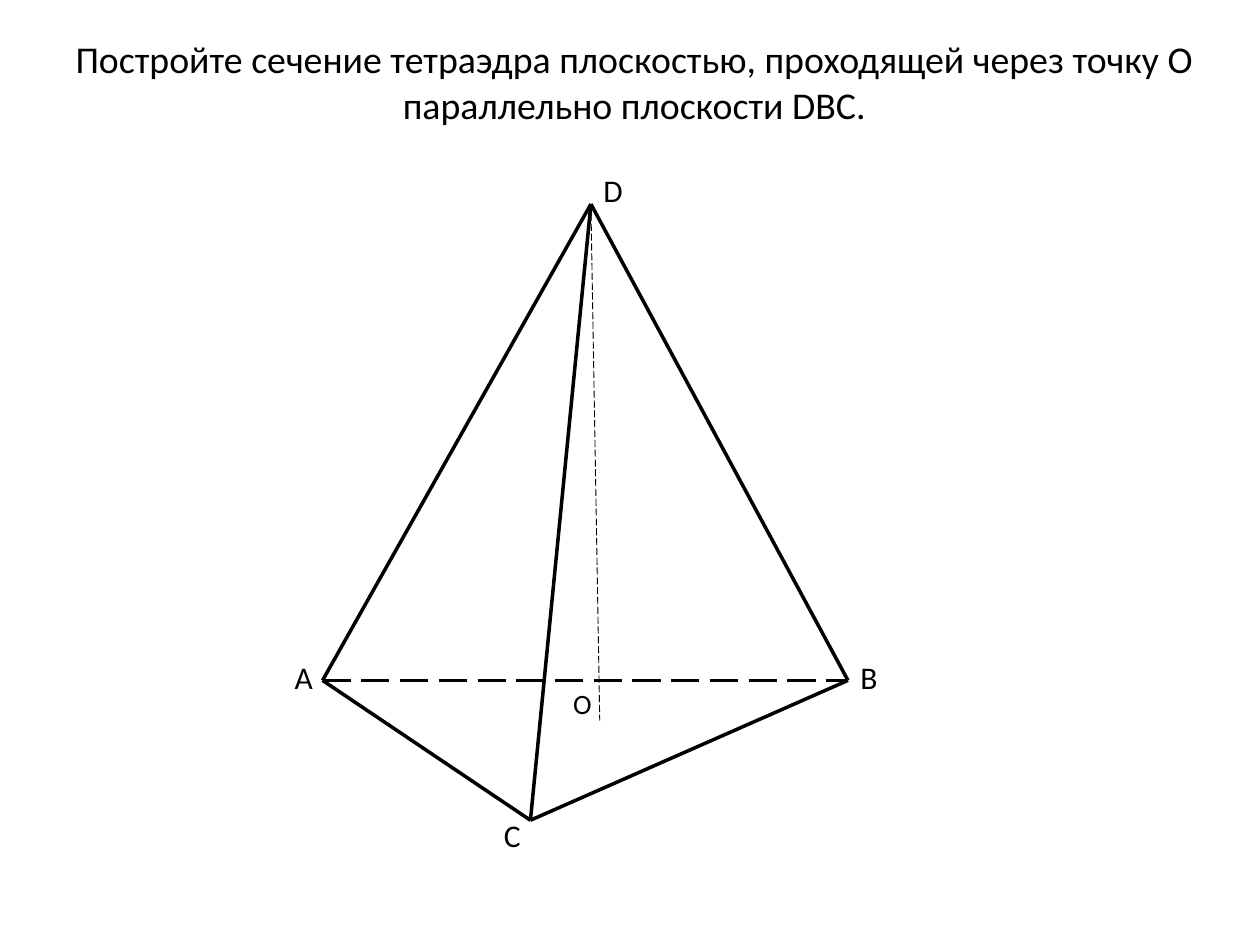
import pptx
import pptx.util
import pptx.dml.color
import pptx.enum.dml
import pptx.enum.shapes
import pptx.enum.text
import pptx.oxml.ns
import lxml.etree

PX = 9144
BLACK = pptx.dml.color.RGBColor(0, 0, 0)
WHITE = pptx.dml.color.RGBColor(255, 255, 255)
FONT = "Calibri"
DASH = pptx.enum.dml.MSO_LINE.LONG_DASH

TITLE = "Постройте сечение тетраэдра плоскостью, проходящей через точку О параллельно плоскости DBC."
TITLE_BOX = (35, 30, 937, 69)
TETRAHEDRON_BOX = (224, 131, 485, 552)

POINTS = {"A": (32, 409), "B": (449, 409), "C": (197, 520), "D": (245, 31), "O": (252, 441)}
EDGES = [
    ("DB", 2, None),
    ("DC", 2, None),
    ("DA", 2, None),
    ("AC", 2, None),
    ("CB", 2, None),
    ("DO", 0.5, DASH),
    ("AB", 2, DASH),
]
LABELS = [
    ("D", (245, 0, 44, 40), 18),
    ("A", (0, 386, 50, 40), 18),
    ("B", (449, 386, 36, 40), 18),
    ("C", (166, 512, 42, 40), 18),
    ("O", (221, 409, 74, 37), 16),
]


def emu(*lengths):
    return [pptx.util.Emu(length * PX) for length in lengths]


def apply_format(target, values):
    for name, value in values.items():
        setattr(target, name, value)


def write_text(frame, text, size, alignment):
    para = frame.paragraphs[0]
    para.alignment = alignment
    span = para.add_run()
    span.text = text
    apply_format(span.font, {"name": FONT, "size": pptx.util.Pt(size)})
    span.font.color.rgb = BLACK


def add_title(page, box):
    title = page.shapes.title
    apply_format(title, dict(zip(("left", "top", "width", "height"), emu(*box))))
    apply_format(title.text_frame, {
        "word_wrap": True,
        "auto_size": pptx.enum.text.MSO_AUTO_SIZE.NONE,
        "vertical_anchor": pptx.enum.text.MSO_ANCHOR.MIDDLE,
    })
    write_text(title.text_frame, TITLE, 21.6, pptx.enum.text.PP_ALIGN.CENTER)


def add_edge(page, start, end, weight, dash):
    edge = page.shapes.add_connector(
        pptx.enum.shapes.MSO_CONNECTOR.STRAIGHT, *emu(*start, *end))
    edge.line.color.rgb = BLACK
    apply_format(edge.line, {"width": pptx.util.Pt(weight), "dash_style": dash})
    lxml.etree.SubElement(edge._element.spPr, pptx.oxml.ns.qn("a:effectLst"))


def add_label(page, text, box, size):
    label = page.shapes.add_textbox(*emu(*box))
    apply_format(label.text_frame, {
        "word_wrap": True,
        "auto_size": pptx.enum.text.MSO_AUTO_SIZE.SHAPE_TO_FIT_TEXT,
    })
    write_text(label.text_frame, text, size, pptx.enum.text.PP_ALIGN.LEFT)


def add_tetrahedron(page, box):
    left, top = box[:2]
    corners = {name: (left + x, top + y) for name, (x, y) in POINTS.items()}
    for (start, end), weight, dash in EDGES:
        add_edge(page, corners[start], corners[end], weight, dash)
    for text, (x, y, width, height), size in LABELS:
        add_label(page, text, (left + x, top + y, width, height), size)


def main():
    deck = pptx.Presentation()
    deck.slide_width, deck.slide_height = emu(1000, 750)
    page = deck.slides.add_slide(deck.slide_layouts.get_by_name("Title Only"))
    page.background.fill.solid()
    page.background.fill.fore_color.rgb = WHITE
    add_title(page, TITLE_BOX)
    add_tetrahedron(page, TETRAHEDRON_BOX)
    deck.save("out.pptx")


if __name__ == "__main__":
    main()
